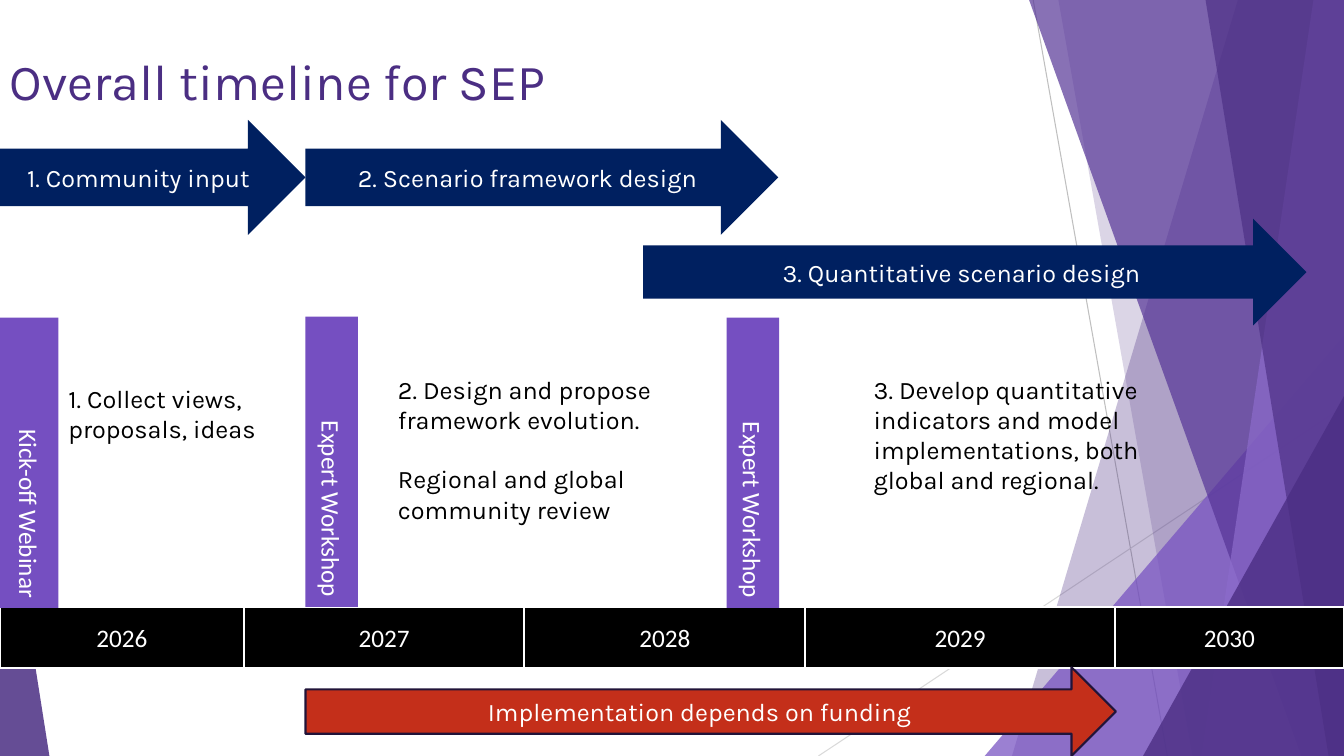
from itertools import pairwise
from lxml.etree import SubElement
from pptx import Presentation
from pptx.dml.color import RGBColor
from pptx.enum.shapes import MSO_CONNECTOR as Connector, MSO_SHAPE as Shape
from pptx.enum.text import MSO_ANCHOR as Anchor, MSO_AUTO_SIZE as AutoSize, PP_ALIGN as Align
from pptx.oxml.ns import qn
from pptx.util import Pt

WIDTH, HEIGHT = 960, 540
WHITE = RGBColor(0xFF, 0xFF, 0xFF)
BLACK = RGBColor(0x00, 0x00, 0x00)
NAVY = RGBColor(0x00, 0x20, 0x60)
RED = RGBColor(0xC4, 0x2F, 0x1A)
DARK_EDGE = RGBColor(0x21, 0x14, 0x39)
PURPLE = RGBColor(0x4B, 0x2E, 0x83)
MID_PURPLE = RGBColor(0x56, 0x35, 0x97)
VIOLET = RGBColor(0x75, 0x4F, 0xC1)
LILAC = RGBColor(0x8C, 0x6B, 0xCB)
GREY = RGBColor(0xBF, 0xBF, 0xBF)
LIGHT_GREY = RGBColor(0xD9, 0xD9, 0xD9)

BANDS = [
    (884.2, 722.9, PURPLE, 30),
    (756, 851.8, PURPLE, 20),
    (735.1, 929.5, MID_PURPLE, 70),
    (938.2, 858.2, LILAC, 70),
    (861.1, 949, PURPLE, 65),
]
YEAR_EDGES = [0, 174.2, 374.6, 575.3, 796.3, WIDTH]
YEAR_TOP, YEAR_HEIGHT = 433.4, 43.9
EVENTS = [
    ("Expert Workshop", 218.2, 226.1, 37.4),
    ("Kick-off Webinar", 0, 226.8, 41.8),
    ("Expert Workshop", 519.1, 226.8, 37.4),
]
PHASES = [
    ("1. Community input", (0, 85.7, 218.2, 82.1)),
    ("2. Scenario framework design", (218.2, 85.7, 337.7, 82.1)),
    ("3. Quantitative scenario design", (459.4, 156.2, 473.8, 76.3)),
]
NOTES = [
    (["1. Collect views,", "proposals, ideas"], (41.8, 270, 155.5, 51.1), 0),
    (["2. Design and propose framework evolution.",
      "Regional and global community review"], (277.2, 263.5, 197.3, 116.6), 21),
    (["3. Develop quantitative indicators and model implementations, "
      "both global and regional."], (617, 263.5, 229.7, 94.3), 0),
]


def apply(target, values):
    for name, value in values.items():
        setattr(target, name, value)


def paint(shape, color, opacity=100, edge=None):
    shape.shadow.inherit = False
    shape.fill.solid()
    shape.fill.fore_color.rgb = color
    if opacity < 100:
        node = shape.element.spPr.find(".//" + qn("a:srgbClr"))
        SubElement(node, qn("a:alpha")).set("val", str(opacity * 1000))
    if edge is None:
        shape.line.fill.background()
    else:
        shape.line.color.rgb = edge
        shape.line.width = Pt(1.5)


def write(shape, texts, font, color, size=18, align=Align.LEFT, gap=0, **frame_values):
    frame = shape.text_frame
    apply(frame, {"word_wrap": True, **frame_values})
    for index, text in enumerate(texts):
        paragraph = frame.paragraphs[0] if index == 0 else frame.add_paragraph()
        paragraph.text = text
        paragraph.alignment = align
        if index and gap:
            paragraph.space_before = Pt(gap)
        apply(paragraph.font, {"name": font, "size": Pt(size)})
        paragraph.font.color.rgb = color


def add_line(slide, start, end, color):
    line = slide.shapes.add_connector(Connector.STRAIGHT, *map(Pt, start + end))
    line.line.color.rgb = color
    line.line.width = Pt(0.75)
    SubElement(line.element.spPr, qn("a:effectLst"))


def add_band(slide, top_x, bottom_x, color, opacity):
    builder = slide.shapes.build_freeform(Pt(top_x), 0)
    corners = [(WIDTH, 0), (WIDTH, HEIGHT), (bottom_x, HEIGHT)]
    builder.add_line_segments([(Pt(x), Pt(y)) for x, y in corners])
    paint(builder.convert_to_shape(), color, opacity)


def add_triangle(slide, left, top, width, apex, color, opacity):
    box = map(Pt, (left, top, width, HEIGHT - top))
    shape = slide.shapes.add_shape(Shape.ISOSCELES_TRIANGLE, *box)
    shape.adjustments[0] = apex
    paint(shape, color, opacity)


def add_label(slide, kind, box, text, font, color, edge=None, align=Align.CENTER):
    shape = slide.shapes.add_shape(kind, *map(Pt, box))
    paint(shape, color, edge=edge)
    write(shape, [text], font, WHITE, align=align, vertical_anchor=Anchor.MIDDLE)
    return shape


def add_event(slide, text, left, top, width):
    box = (left, top, width, 207.4)
    shape = add_label(slide, Shape.RECTANGLE, box, text, "Calibri", VIOLET, align=Align.RIGHT)
    shape.element.txBody.bodyPr.set("vert", "vert")


def add_text(slide, texts, box, color, **values):
    write(slide.shapes.add_textbox(*map(Pt, box)), texts, "Karla", color, **values)


def add_backdrop(slide):
    add_line(slide, (738, 0), (833.8, HEIGHT), GREY)
    add_line(slide, (WIDTH, 290.2), (584.6, HEIGHT), LIGHT_GREY)
    for band in BANDS[:2]:
        add_band(slide, *band)
    add_triangle(slide, 703.4, 239.8, 256.6, 1, VIOLET, 72)
    for band in BANDS[2:]:
        add_band(slide, *band)
    add_triangle(slide, 816.5, 283, 143.5, 1, PURPLE, 80)
    add_triangle(slide, 0, 316.1, 35.3, 0, PURPLE, 85)


def main():
    presentation = Presentation()
    apply(presentation, {"slide_width": Pt(WIDTH), "slide_height": Pt(HEIGHT)})
    slide = presentation.slides.add_slide(presentation.slide_layouts[6])
    add_backdrop(slide)
    for year, (left, right) in enumerate(pairwise(YEAR_EDGES), 2026):
        box = (left, YEAR_TOP, right - left, YEAR_HEIGHT)
        add_label(slide, Shape.RECTANGLE, box, str(year), "Calibri", BLACK, WHITE)
    for event in EVENTS:
        add_event(slide, *event)
    add_text(slide, ["Overall timeline for SEP"], (0, 28.8, 828, 56.9), PURPLE,
             size=36, vertical_anchor=Anchor.MIDDLE)
    for text, box in PHASES:
        add_label(slide, Shape.RIGHT_ARROW, box, text, "Karla", NAVY)
    add_label(slide, Shape.RIGHT_ARROW, (218.2, 476.6, 578.9, 63.4),
              "Implementation depends on funding", "Karla", RED, DARK_EDGE)
    for texts, box, gap in NOTES:
        add_text(slide, texts, box, BLACK, gap=gap, auto_size=AutoSize.SHAPE_TO_FIT_TEXT)
    presentation.save("out.pptx")


if __name__ == "__main__":
    main()
